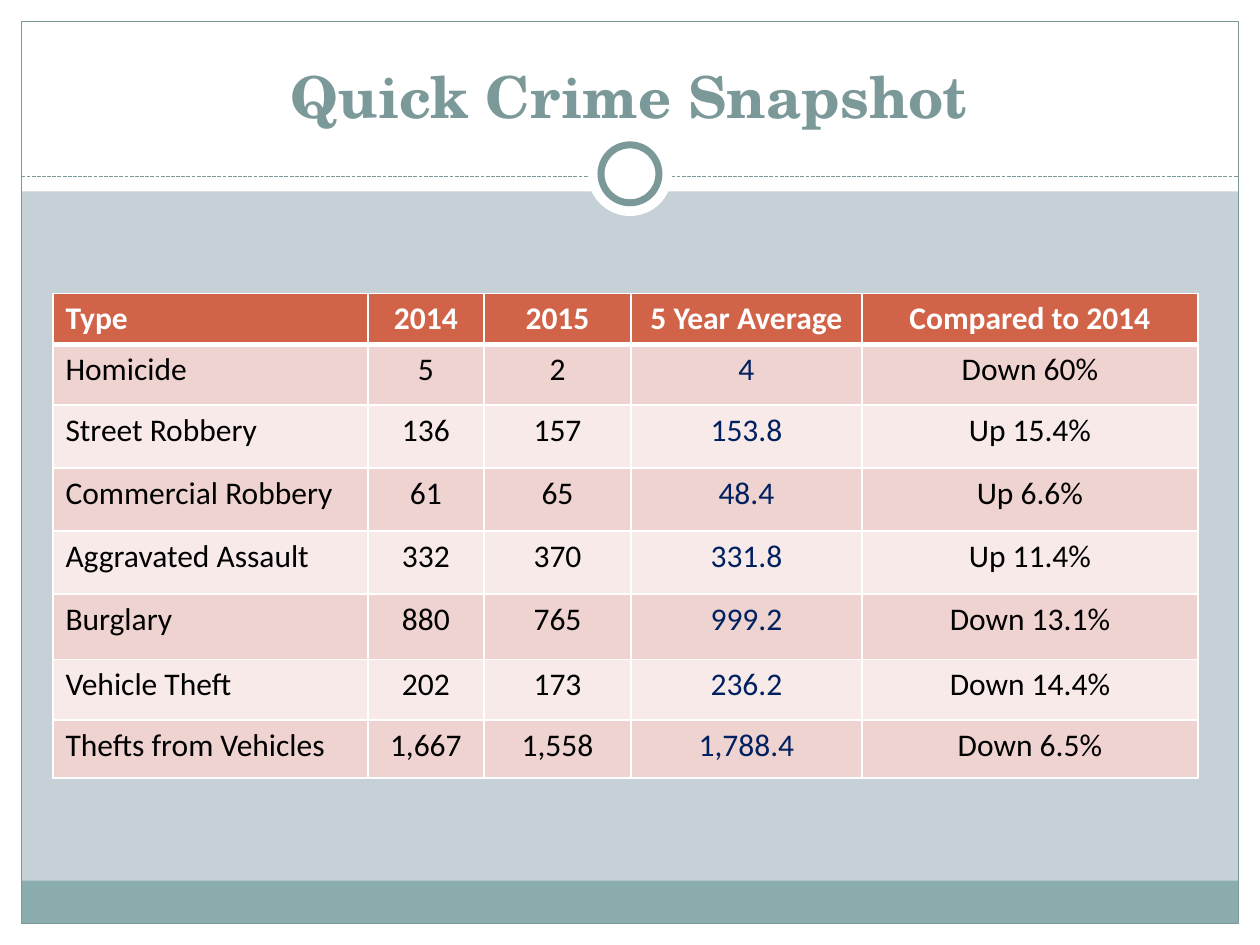
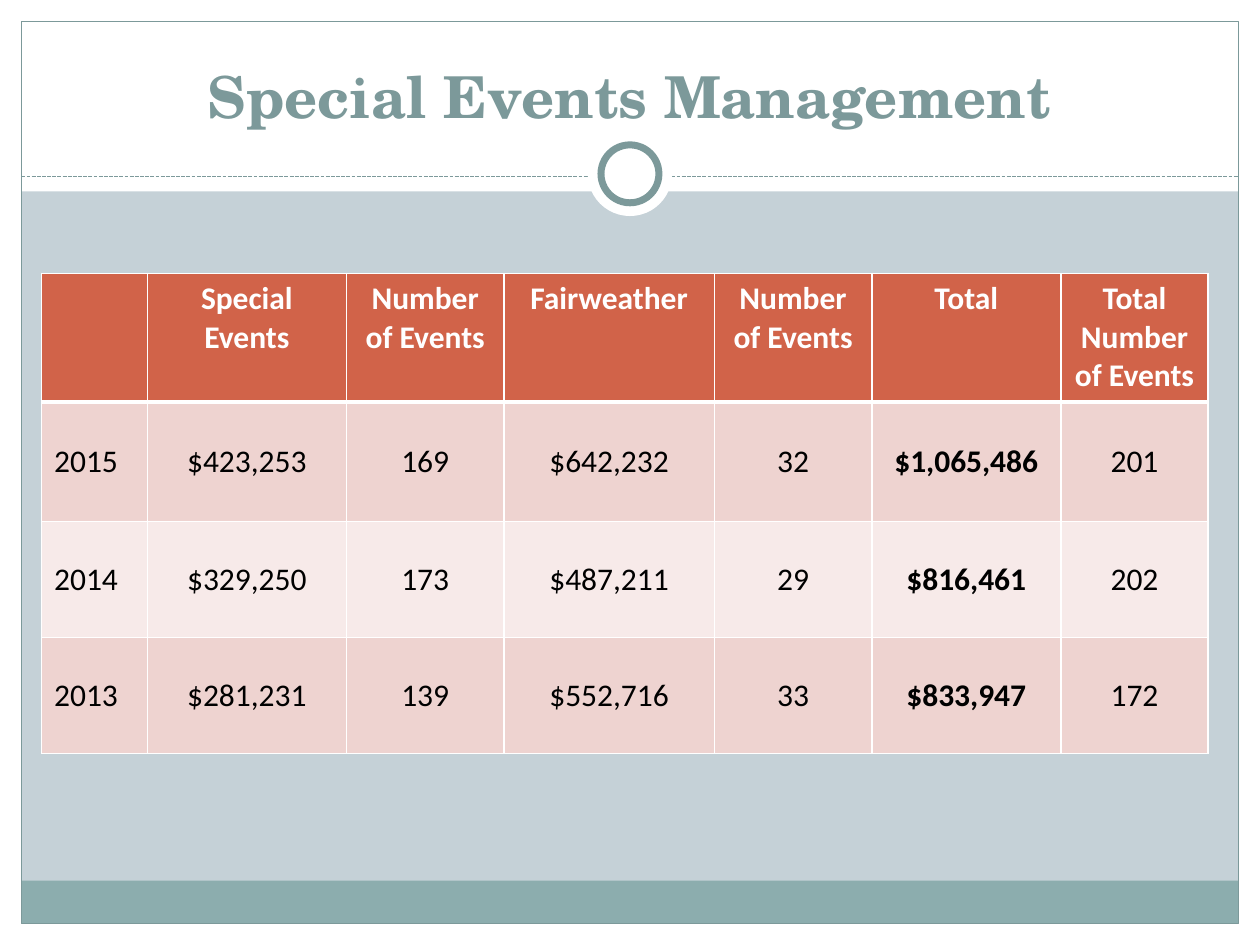
"""Build two table slides that share one framed layout."""
from dataclasses import dataclass

from lxml import etree
from pptx import Presentation
from pptx import util as u
from pptx.dml import color
from pptx.enum import dml, shapes, text
from pptx.oxml import ns


@dataclass(frozen=True)
class Theme:
    background: str = "C5D1D7"
    white: str = "FFFFFF"
    black: str = "000000"
    accent: str = "7C999A"
    footer: str = "8CADAE"
    header: str = "D16349"
    bands: tuple = ("EED3D0", "F7EAE9")
    navy: str = "002060"
    title_font: str = "TeX Gyre Schola"
    table_font: str = "Calibri"
    title_size: float = 33
    table_size: float = 18
    thin_border: float = 1
    thick_border: float = 3
    frame_line: float = 0.75
    ring_line: float = 4


THEME = Theme()
WIDTH, HEIGHT, MARGIN = 10, 7.5, 0.17
HEADER_HEIGHT, FOOTER_HEIGHT, RULE_TOP = 1.52, 0.34, 1.4
RING_CENTER = (5, 1.38)
TITLE_BOX = (0.33, 0.25, 9.33, 0.83)

SLIDES = [
    {
        "title": "Quick Crime Snapshot",
        "position": (0.42, 2.33),
        "columns": [2.5, 0.92, 1.17, 1.83, 2.67],
        "rows": [0.4, 0.48, 0.5, 0.5, 0.5, 0.52, 0.48, 0.46],
        "anchor": text.MSO_ANCHOR.TOP,
        "column_formats": {3: {"ink": THEME.navy}},
        "cells": [
            ("Type", "2014", "2015", "5 Year Average", "Compared to 2014"),
            ("Homicide", "5", "2", "4", "Down 60%"),
            ("Street Robbery", "136", "157", "153.8", "Up 15.4%"),
            ("Commercial Robbery", "61", "65", "48.4", "Up 6.6%"),
            ("Aggravated Assault", "332", "370", "331.8", "Up 11.4%"),
            ("Burglary", "880", "765", "999.2", "Down 13.1%"),
            ("Vehicle Theft", "202", "173", "236.2", "Down 14.4%"),
            ("Thefts from Vehicles", "1,667", "1,558", "1,788.4", "Down 6.5%"),
        ],
    },
    {
        "title": "Special Events Management",
        "position": (0.33, 2.17),
        "columns": [0.84, 1.58, 1.25, 1.67, 1.25, 1.5, 1.17],
        "rows": [1.02, 0.95, 0.92, 0.92],
        "anchor": text.MSO_ANCHOR.MIDDLE,
        "column_formats": {5: {"bold": True}},
        "cells": [
            ("", "Special Events", "Number of Events", "Fairweather",
             "Number of Events", "Total", "Total Number of Events"),
            ("2015", "$423,253", "169", "$642,232", "32", "$1,065,486", "201"),
            ("2014", "$329,250", "173", "$487,211", "29", "$816,461", "202"),
            ("2013", "$281,231", "139", "$552,716", "33", "$833,947", "172"),
        ],
    },
]


def rgb(value):
    return color.RGBColor.from_string(value)


def inches(values):
    return [u.Inches(value) for value in values]


def write(frame, content, font=THEME.table_font, size=THEME.table_size,
          ink=THEME.black, bold=False, align=text.PP_ALIGN.CENTER):
    paragraph = frame.paragraphs[0]
    paragraph.alignment = align
    if content:
        run = paragraph.add_run()
        run.text = content
        run.font.name, run.font.size, run.font.bold = font, u.Pt(size), bold
        run.font.color.rgb = rgb(ink)


def add_panel(slide, box, fill=None, line=None, weight=THEME.frame_line,
              kind=shapes.MSO_SHAPE.RECTANGLE):
    shape = slide.shapes.add_shape(kind, *inches(box))
    shape.shadow.inherit = False
    if fill:
        shape.fill.solid()
        shape.fill.fore_color.rgb = rgb(fill)
    else:
        shape.fill.background()
    if line:
        shape.line.color.rgb = rgb(line)
        shape.line.width = u.Pt(weight)
    else:
        shape.line.fill.background()
    return shape


def add_disc(slide, diameter, **style):
    left, top = (center - diameter / 2 for center in RING_CENTER)
    return add_panel(slide, (left, top, diameter, diameter),
                     kind=shapes.MSO_SHAPE.OVAL, **style)


def add_rule(slide):
    ends = inches((MARGIN, RULE_TOP, WIDTH - MARGIN, RULE_TOP))
    rule = slide.shapes.add_connector(shapes.MSO_CONNECTOR.STRAIGHT, *ends)
    rule.line.color.rgb = rgb(THEME.accent)
    rule.line.width = u.Pt(THEME.frame_line)
    rule.line.dash_style = dml.MSO_LINE.SQUARE_DOT
    etree.SubElement(rule.element.spPr, ns.qn("a:effectLst"))
    return rule


def build_layout(layout, slide):
    """Draw the shared frame on a slide and move it to the layout."""
    for placeholder in list(layout.placeholders):
        if placeholder.placeholder_format.type != shapes.PP_PLACEHOLDER.TITLE:
            layout.shapes.element.remove(placeholder.element)
    bottom, right = HEIGHT - MARGIN, WIDTH - MARGIN
    inner_width = right - MARGIN
    edges = [(0, bottom, WIDTH, MARGIN), (0, 0, WIDTH, HEADER_HEIGHT),
             (0, 0, MARGIN, HEIGHT), (right, 0, MARGIN, HEIGHT)]
    parts = [add_panel(slide, edge, fill=THEME.white) for edge in edges]
    parts += [
        add_panel(slide, (MARGIN, bottom - FOOTER_HEIGHT, inner_width, FOOTER_HEIGHT),
                  fill=THEME.footer),
        add_panel(slide, (MARGIN, MARGIN, inner_width, bottom - MARGIN),
                  line=THEME.accent),
        add_rule(slide),
        add_disc(slide, 0.67, fill=THEME.white),
        add_disc(slide, 0.46, fill=THEME.white, line=THEME.accent,
                 weight=THEME.ring_line),
    ]
    for part in parts:
        layout.shapes.element.append(part.element)


def set_borders(cell, **weights):
    properties = cell._tc.get_or_add_tcPr()
    for index, side in enumerate("LRTB"):
        width = u.Pt(weights.get(side, THEME.thin_border))
        border = etree.Element(ns.qn(f"a:ln{side}"), w=str(int(width)))
        fill = etree.SubElement(border, ns.qn("a:solidFill"))
        etree.SubElement(fill, ns.qn("a:srgbClr"), val=THEME.white)
        properties.insert(index, border)


def set_title(slide, content):
    title = slide.shapes.title
    title.left, title.top, title.width, title.height = inches(TITLE_BOX)
    frame = title.text_frame
    frame.auto_size = text.MSO_AUTO_SIZE.NONE
    frame.vertical_anchor = text.MSO_ANCHOR.BOTTOM
    write(frame, content, font=THEME.title_font, size=THEME.title_size,
          ink=THEME.accent, bold=True)


def format_cell(cell, content, row, column, data):
    style = dict(data["column_formats"].get(column, {}))
    if row == 0:
        style = {"ink": THEME.white, "bold": True}
        fill, borders = THEME.header, {"B": THEME.thick_border}
    else:
        fill = THEME.bands[(row - 1) % len(THEME.bands)]
        borders = {"T": THEME.thick_border} if row == 1 else {}
        cell.vertical_anchor = data["anchor"]
    if column == 0:
        style["align"] = text.PP_ALIGN.LEFT
    cell.fill.solid()
    cell.fill.fore_color.rgb = rgb(fill)
    set_borders(cell, **borders)
    write(cell.text_frame, content, **style)


def add_data_table(slide, data):
    columns, rows = data["columns"], data["rows"]
    box = inches((*data["position"], sum(columns), sum(rows)))
    table = slide.shapes.add_table(len(rows), len(columns), *box).table
    for column, width in zip(table.columns, columns):
        column.width = u.Inches(width)
    for row, height in zip(table.rows, rows):
        row.height = u.Inches(height)
    for row, values in enumerate(data["cells"]):
        for column, value in enumerate(values):
            format_cell(table.cell(row, column), value, row, column, data)


def main():
    presentation = Presentation()
    presentation.slide_width, presentation.slide_height = inches((WIDTH, HEIGHT))
    background = presentation.slide_master.background.fill
    background.solid()
    background.fore_color.rgb = rgb(THEME.background)
    layout = presentation.slide_layouts.get_by_name("Title Only")
    slides = [presentation.slides.add_slide(layout) for _ in SLIDES]
    build_layout(layout, slides[0])
    for slide, data in zip(slides, SLIDES):
        set_title(slide, data["title"])
        add_data_table(slide, data)
    presentation.save("out.pptx")


if __name__ == "__main__":
    main()
